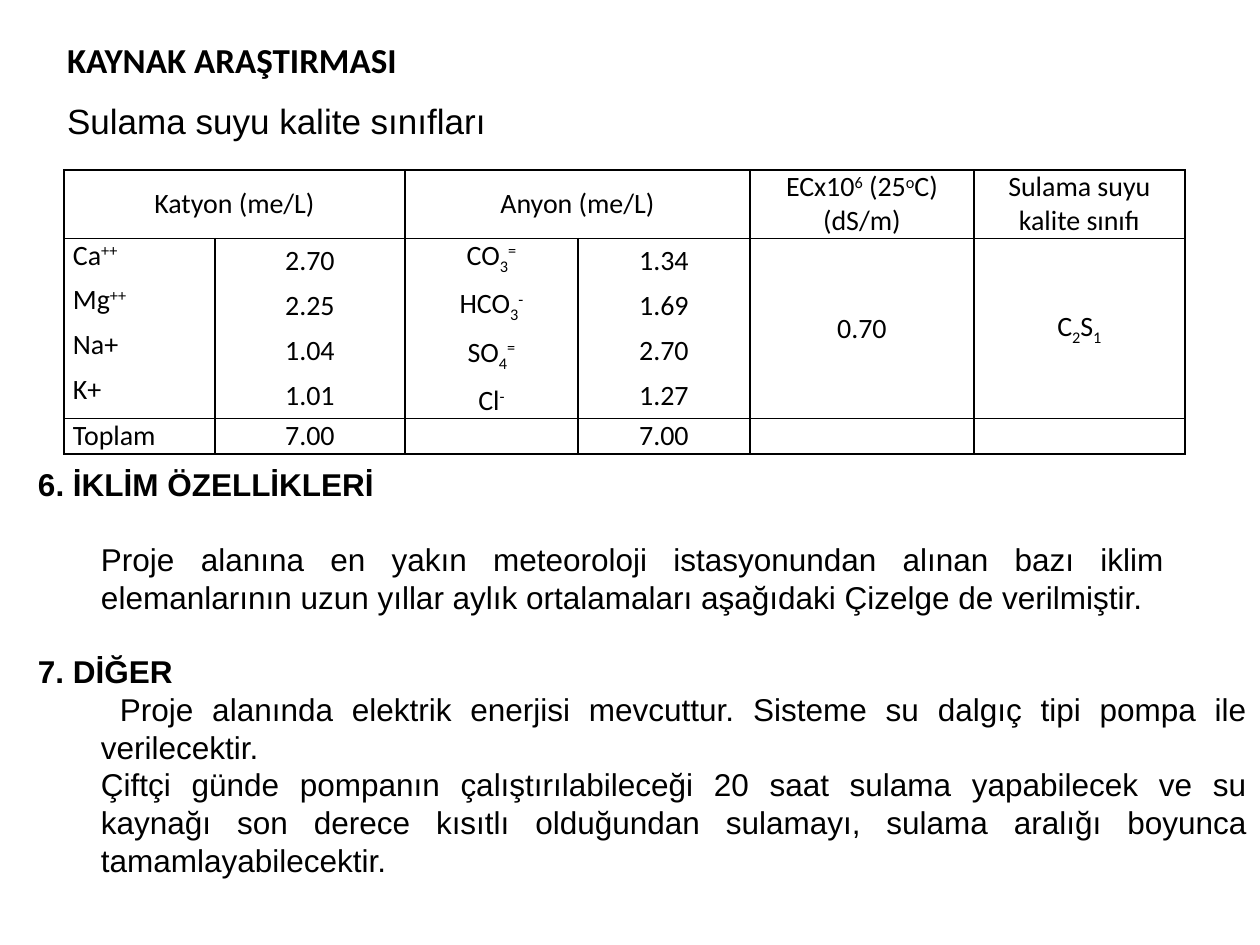
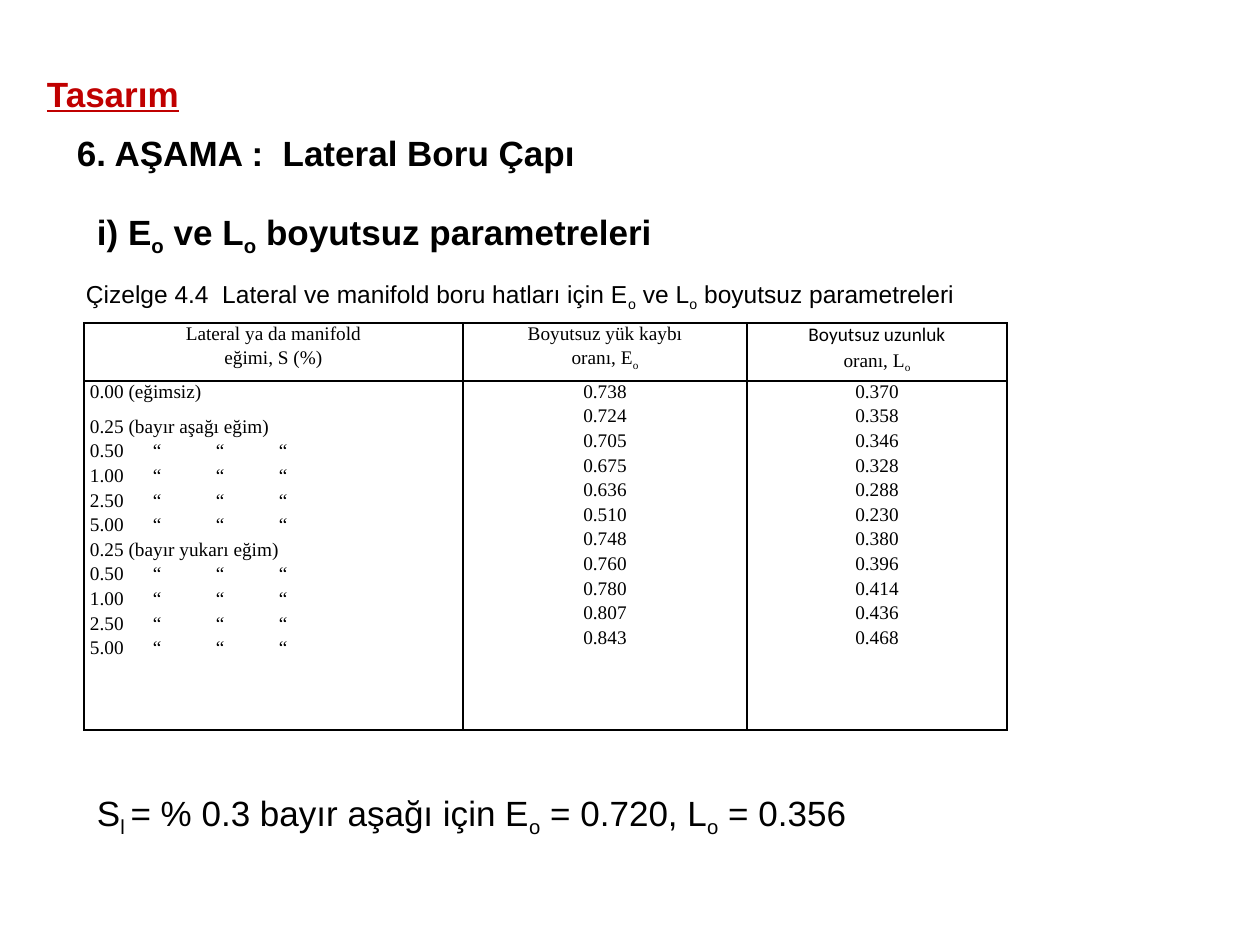
from lxml.etree import SubElement as Sub
from pptx import Presentation
from pptx.dml.color import RGBColor as Rgb
from pptx.enum.text import MSO_ANCHOR as Anchor, MSO_AUTO_SIZE as Fit, PP_ALIGN as Align
from pptx.oxml import parse_xml
from pptx.oxml.ns import nsdecls, qn
from pptx.util import Emu, Pt

SCALE = 914400 / 126
COLORS = {"ink": "000000", "red": "C00000"}
SERIF = "Times New Roman"
SIDES = ("L", "R", "T", "B")
SHIFTS = {"_": -25000, "^": 30000}
ALIGNS = {"l": Align.LEFT, "c": Align.CENTER, "j": Align.JUSTIFY}


def px(size):
    return Emu(round(size * SCALE))


def write(frame, lines, size=18, font="Arial", color="ink", bold=False,
          under=False, **style):
    for i, line in enumerate(lines):
        text, extra = line if isinstance(line, tuple) else (line, {})
        look = {"font": font, "bold": bold, **style, **extra}
        para = frame.paragraphs[0] if i == 0 else frame.add_paragraph()
        para.alignment = ALIGNS[look.get("align", "l")]
        para.space_before = Pt(look.get("before", 0))
        para.space_after = Pt(look.get("after", 0))
        props = para._p.get_or_add_pPr()
        props.set("marL", str(px(look.get("left", 0))))
        props.set("indent", str(px(look.get("first", 0))))
        if "tabs" in look:
            stops = Sub(props, qn("a:tabLst"))
            for stop in look["tabs"]:
                Sub(stops, qn("a:tab"), pos=str(px(stop)), algn="l")
        for part in text.split("|"):
            shift = SHIFTS.get(part[:1])
            run = para.add_run()
            run.text = part[1:] if shift else part
            face = run.font
            face.size, face.name = Pt(size), look["font"]
            face.bold, face.underline = look["bold"], under
            face.color.rgb = Rgb.from_string(COLORS[color])
            if shift:
                run._r.get_or_add_rPr().set("baseline", str(shift))


def setup(frame, anchor, pads):
    frame.word_wrap = True
    frame.auto_size = Fit.NONE
    frame.vertical_anchor = anchor
    (frame.margin_left, frame.margin_top,
     frame.margin_right, frame.margin_bottom) = map(px, pads)


def label(slide, box, lines, anchor=Anchor.TOP, pads=(13, 6, 13, 6), **style):
    frame = slide.shapes.add_textbox(*map(px, box)).text_frame
    setup(frame, anchor, pads)
    write(frame, lines, **style)


def start(deck, box, text, **style):
    slide = deck.slides.add_slide(deck.slide_layouts[5])
    title = slide.shapes.title
    title.left, title.top, title.width, title.height = map(px, box)
    setup(title.text_frame, Anchor.MIDDLE, (13, 6, 13, 6))
    write(title.text_frame, [text], size=20, bold=True, **style)
    return slide


def frame_cell(cell):
    cell.fill.background()
    props = cell._tc.get_or_add_tcPr()
    for i, side in enumerate(SIDES):
        props.insert(i, parse_xml(
            f'<a:ln{side} {nsdecls("a")} w="12700"><a:solidFill>'
            f'<a:srgbClr val="{COLORS["ink"]}"/></a:solidFill></a:ln{side}>'))


def add_grid(slide, place, cols, rows, cells, pad, anchors, aligns, **style):
    box = (*place, sum(cols), sum(rows))
    table = slide.shapes.add_table(len(rows), len(cols), *map(px, box)).table
    table.first_row = table.horz_banding = False
    for col, width in zip(table.columns, cols):
        col.width = px(width)
    for row, height in zip(table.rows, rows):
        row.height = px(height)
    for r, line in enumerate(cells):
        for c, lines in enumerate(line):
            cell = table.cell(r, c)
            cell.margin_left = cell.margin_right = px(pad)
            cell.margin_top = cell.margin_bottom = 0
            cell.vertical_anchor = anchors[c] if r else anchors[-1]
            frame_cell(cell)
            write(cell.text_frame, lines, align=aligns[c] if r else "c", **style)
    return table


def ion_table(slide, place):
    none = [""]
    cells = [
        [["Katyon (me/L)"], none, ["Anyon (me/L)"], none,
         ["ECx10|^6| (25|^o|C) (dS/m)"], ["Sulama suyu kalite sınıfı"]],
        [["Ca|^++", "Mg|^++", "Na+", "K+"], ["2.70", "2.25", "1.04", "1.01"],
         ["CO|_3|^=", "HCO|_3|^-", "SO|_4|^=", "Cl|^-"],
         ["1.34", "1.69", "2.70", "1.27"], ["0.70"], ["C|_2|S|_1"]],
        [["Toplam"], ["7.00"], none, ["7.00"], none, none],
    ]
    table = add_grid(slide, place, (151, 190, 173, 172, 224, 211), (67, 179, 34),
                     cells, 9, [Anchor.TOP] + [Anchor.MIDDLE] * 5, "jccccc",
                     size=16, font="Calibri", before=6)
    for c in (0, 2):
        table.cell(0, c).merge(table.cell(0, c + 1))


def slope_table(slide, place):
    def ditto(tabs):
        return [(f"{slope}\t“\t“\t“", {"tabs": tabs})
                for slope in ("0.50", "1.00", "2.50", "5.00")]

    slopes = ["0.00 (eğimsiz)", ("0.25 (bayır aşağı eğim)", {"before": 6}),
              *ditto((58, 101, 148)), "0.25 (bayır yukarı eğim)",
              *ditto((58, 106, 153))]
    losses = ["0.738", "0.724", "0.705", "0.675", "0.636", "0.510",
              "0.748", "0.760", "0.780", "0.807", "0.843"]
    spans = ["0.370", "0.358", "0.346", "0.328", "0.288", "0.230",
             "0.380", "0.396", "0.414", "0.436", "0.468"]
    heads = [["Lateral ya da manifold", "eğimi, S (%)"],
             ["Boyutsuz yük kaybı", "oranı, E|_o"],
             [("Boyutsuz uzunluk", {"font": "Calibri", "before": 6}), "oranı, L|_o"]]
    add_grid(slide, place, (379, 284, 260), (58, 349),
             [heads, [slopes, losses, spans]], 6, [Anchor.TOP] * 3, "lcc",
             size=11, font=SERIF, after=1.8)


def source_slide(deck):
    slide = start(deck, (54, 31, 1180, 56), "KAYNAK ARAŞTIRMASI", font="Calibri")
    label(slide, (54, 93, 764, 55), ["Sulama suyu kalite sınıfları"],
          Anchor.MIDDLE, size=20)
    ion_table(slide, (64, 170))
    head = {"bold": True, "left": 0}
    label(slide, (25, 459, 1152, 165), [
        ("6. İKLİM ÖZELLİKLERİ", head),
        ("Proje alanına en yakın meteoroloji istasyonundan alınan bazı iklim "
         "elemanlarının uzun yıllar aylık ortalamaları aşağıdaki Çizelge de "
         "verilmiştir.", {"before": 21.5}),
    ], align="j", left=63)
    label(slide, (25, 646, 1235, 280), [
        ("7. DİĞER", head),
        ("Proje alanında elektrik enerjisi mevcuttur. Sisteme su dalgıç tipi "
         "pompa ile verilecektir.", {"first": 19}),
        "Çiftçi günde pompanın çalıştırılabileceği 20 saat sulama yapabilecek "
        "ve su kaynağı son derece kısıtlı olduğundan sulamayı, sulama aralığı "
        "boyunca tamamlayabilecektir.",
    ], align="j", left=63)


def design_slide(deck):
    slide = start(deck, (34, 66, 1226, 55), "Tasarım", color="red", under=True)
    label(slide, (64, 125, 1121, 55), ["6. AŞAMA :  Lateral Boru Çapı"],
          size=20, bold=True)
    label(slide, (84, 204, 1121, 55), ["i) E|_o| ve L|_o| boyutsuz parametreleri"],
          size=20, bold=True)
    label(slide, (64, 271, 912, 43),
          ["Çizelge 4.4  Lateral ve manifold boru hatları için "
           "E|_o| ve L|_o| boyutsuz parametreleri"],
          Anchor.MIDDLE, (13, 10, 13, 3), size=14, align="c")
    slope_table(slide, (84, 323))
    label(slide, (84, 785, 953, 55),
          ["S|_l |= % 0.3 bayır aşağı için E|_o| = 0.720, L|_o| = 0.356"], size=20)


def main():
    deck = Presentation()
    deck.slide_width, deck.slide_height = px(1260), px(945)
    source_slide(deck)
    design_slide(deck)
    deck.save("out.pptx")


if __name__ == "__main__":
    main()
